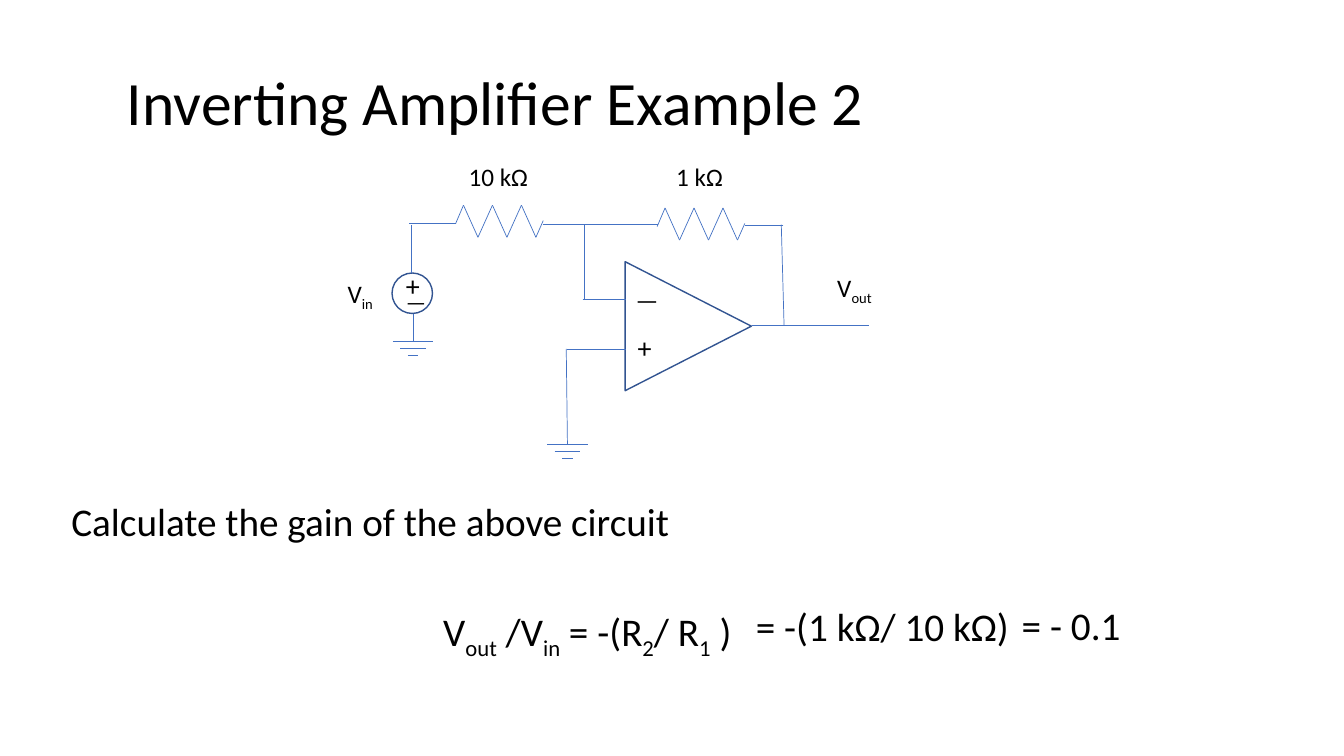
from itertools import pairwise

from lxml.etree import SubElement
from pptx import Presentation
from pptx.dml.color import RGBColor
from pptx.enum.shapes import MSO_CONNECTOR, MSO_SHAPE
from pptx.enum.text import MSO_ANCHOR
from pptx.oxml.ns import qn
from pptx.util import Cm, Pt

COLORS = {"text": "000000", "wire": "4472C4", "outline": "325491"}
FONT = "Calibri"


def add_text(shapes, box, pieces, size, spacing=None, before=None, anchor=MSO_ANCHOR.TOP):
    """Write text pieces in a box, every second piece as a subscript."""
    frame = shapes.add_textbox(*map(Cm, box)).text_frame
    frame.word_wrap = True
    frame.vertical_anchor = anchor
    paragraph = frame.paragraphs[0]
    if spacing:
        paragraph.line_spacing = spacing
    if before:
        paragraph.space_before = Pt(before)
    for index, piece in enumerate(pieces):
        run = paragraph.add_run()
        run.text = piece
        run.font.name = FONT
        run.font.size = Pt(size)
        run.font.color.rgb = RGBColor.from_string(COLORS["text"])
        if index % 2:
            run._r.get_or_add_rPr().set("baseline", "-25000")


def add_wire(shapes, start, end):
    """Draw one thin straight wire between two points."""
    wire = shapes.add_connector(MSO_CONNECTOR.STRAIGHT, *map(Cm, (*start, *end)))
    wire.line.color.rgb = RGBColor.from_string(COLORS["wire"])
    wire.line.width = Pt(0.5)
    SubElement(wire._element.spPr, qn("a:effectLst"))


def add_outline(shapes, preset, box, rotation=0):
    """Draw an unfilled component symbol."""
    symbol = shapes.add_shape(preset, *map(Cm, box))
    symbol.rotation = rotation
    symbol.shadow.inherit = False
    symbol.fill.background()
    symbol.line.color.rgb = RGBColor.from_string(COLORS["outline"])
    symbol.line.width = Pt(1)


def add_ground(shapes, x, y):
    """Draw a ground symbol of three shrinking bars centred on x."""
    for level, half in enumerate((0.51, 0.32, 0.13)):
        bar_y = y + level * 0.18
        add_wire(shapes, (x - half, bar_y), (x + half, bar_y))


def add_resistor(shapes, x, y):
    """Draw a zigzag resistor starting at the given point."""
    bends = [(x + 0.2 + 0.365 * k, y + (0.34 if k % 2 else -0.47)) for k in range(6)]
    for start, end in pairwise([(x, y), *bends, (x + 2.21, y - 0.08)]):
        add_wire(shapes, start, end)


def add_circuit(slide, left, top):
    """Draw the inverting amplifier circuit from its top left corner."""
    shapes = slide.shapes.add_group_shape().shapes
    add_outline(shapes, MSO_SHAPE.ISOSCELES_TRIANGLE, (left + 7.22, top + 2.73, 3.25, 3.18), 90)
    add_outline(shapes, MSO_SHAPE.OVAL, (left + 1.38, top + 2.98, 1.02, 1.02))

    wires = [
        ((6.18, 3.64), (7.27, 3.64)),
        ((5.8, 4.91), (7.27, 4.91)),
        ((10.45, 4.3), (13.39, 4.3)),
        ((5.8, 7.3), (5.77, 4.89)),
        ((5.19, 1.76), (8.09, 1.76)),
        ((6.23, 3.64), (6.23, 1.76)),
        ((1.86, 2.98), (1.86, 1.76)),
        ((2.98, 1.74), (1.81, 1.74)),
        ((11.26, 4.3), (11.19, 1.76)),
        ((11.24, 1.79), (10.27, 1.79)),
        ((1.91, 4.69), (1.91, 4.0)),
    ]
    for (x1, y1), (x2, y2) in wires:
        add_wire(shapes, (left + x1, top + y1), (left + x2, top + y2))
    for x, y in ((1.91, 4.69), (5.8, 7.3)):
        add_ground(shapes, left + x, top + y)
    for x, y in ((2.98, 1.74), (8.06, 1.81)):
        add_resistor(shapes, left + x, top + y)

    labels = [
        (7.27, 3.14, 0.86, 1.02, ["—"], 18),
        (7.32, 4.3, 0.86, 1.12, ["+"], 20),
        (1.48, 2.73, 0.86, 1.12, ["+"], 20),
        (1.48, 3.24, 0.86, 0.94, ["—"], 16),
        (0.01, 2.98, 1.45, 1.02, ["V", "in"], 18),
        (12.35, 2.83, 1.45, 1.02, ["V", "out"], 18),
        (3.06, 0.04, 2.49, 1.02, ["10 kΩ"], 18),
        (8.29, 0.04, 2.67, 1.55, ["1 kΩ"], 18),
    ]
    for x, y, width, height, pieces, size in labels:
        add_text(shapes, (left + x, top + y, width, height), pieces, size)


def add_solution(slide, left, top):
    """Write the question and the gain calculation below it."""
    lines = [
        (0, 0, 16.66, 1.75, ["Calculate the gain of the above circuit"]),
        (9.37, 2.64, 8.03, 2.18, ["V", "out", " /V", "in", " = -(R", "2", "/ R", "1", " )"]),
        (17.25, 2.64, 7.16, 2.18, ["= -(1 kΩ/ 10 kΩ)"]),
        (23.95, 2.62, 3.71, 2.18, ["= - 0.1"]),
    ]
    for x, y, width, height, pieces in lines:
        add_text(slide.shapes, (left + x, top + y, width, height), pieces, 28, 0.9, 10)


def main():
    """Build the slide and save it."""
    presentation = Presentation()
    presentation.slide_width = Cm(33.87)
    presentation.slide_height = Cm(19.05)
    slide = presentation.slides.add_slide(presentation.slide_layouts[6])
    add_text(slide.shapes, (2.95, 0.81, 29.21, 3.68), ["Inverting Amplifier Example 2"],
             44, 0.9, anchor=MSO_ANCHOR.MIDDLE)
    add_circuit(slide, 8.5, 3.9)
    add_solution(slide, 1.55, 12.55)
    presentation.save("out.pptx")


if __name__ == "__main__":
    main()
